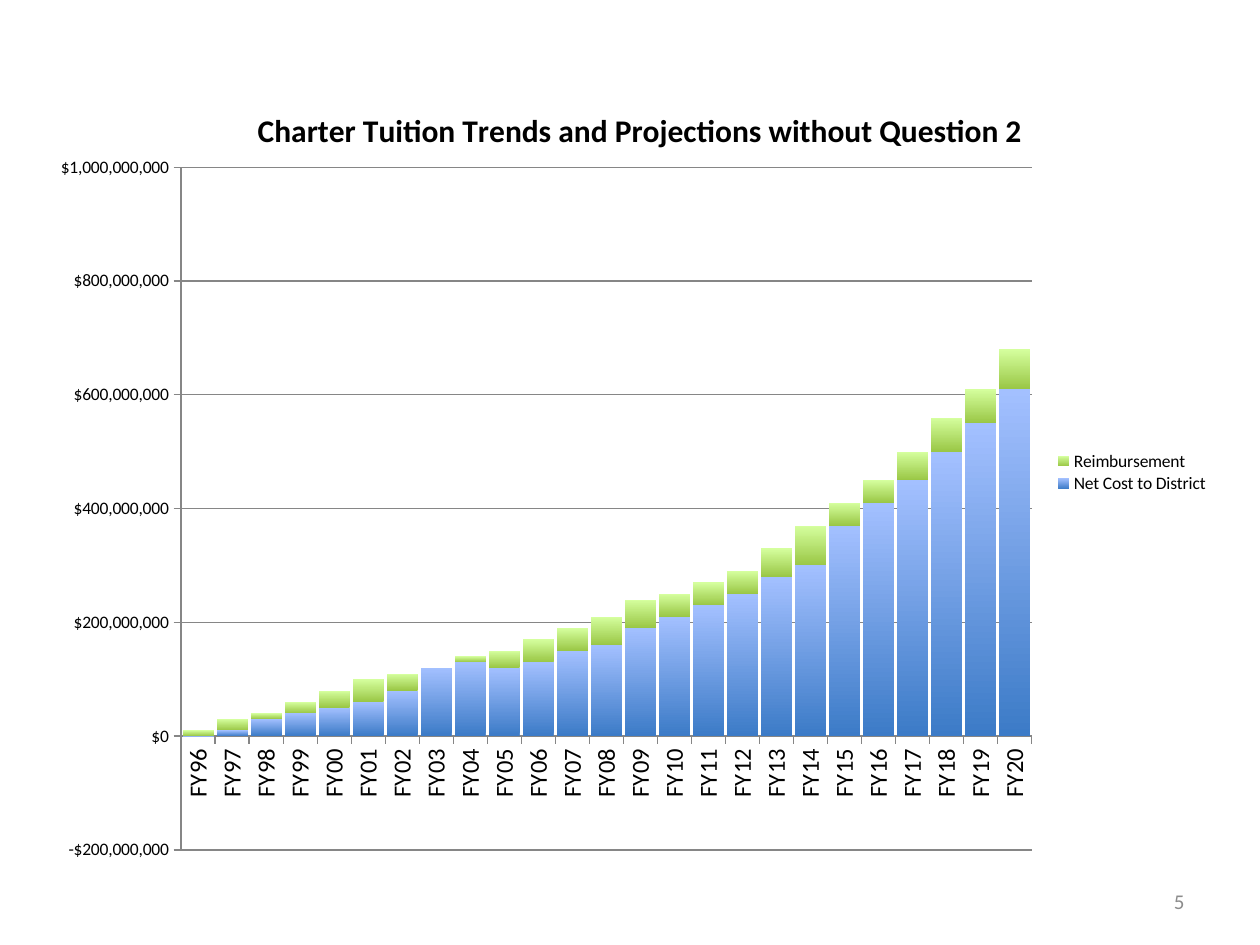
from lxml import etree
from pptx import Presentation
from pptx.chart.data import CategoryChartData
from pptx.dml.color import RGBColor
from pptx.enum.chart import XL_CHART_TYPE, XL_LEGEND_POSITION, XL_TICK_MARK
from pptx.enum.text import MSO_ANCHOR, PP_ALIGN
from pptx.oxml.ns import qn
from pptx.util import Pt

STACKED = XL_CHART_TYPE.COLUMN_STACKED
RIGHT_LEGEND = XL_LEGEND_POSITION.RIGHT
TICK_OUT = XL_TICK_MARK.OUTSIDE
MIDDLE = MSO_ANCHOR.MIDDLE
RIGHT = PP_ALIGN.RIGHT
MILLION = 1_000_000
GRAY = "868686"


def format_text(font, size, color="000000", bold=False):
    font.name, font.size, font.bold = "Calibri", Pt(size), bold
    font.color.rgb = RGBColor.from_string(color)


def place(parent, before, **settings):
    """Give a chart part a manual layout, in fractions of the chart."""
    for old in parent.findall(qn("c:layout")):
        parent.remove(old)
    layout = etree.Element(qn("c:layout"))
    manual = etree.SubElement(layout, qn("c:manualLayout"))
    for name, value in settings.items():
        etree.SubElement(manual, qn("c:" + name)).set("val", str(value))
    following = next(child for child in parent if child.tag in map(qn, before))
    following.addprevious(layout)


deck = Presentation()
deck.slide_width, deck.slide_height = Pt(720), Pt(540)
page = deck.slides.add_slide(deck.slide_layouts[6])

# Data, in millions of dollars
net_cost = [0, 10, 30, 40, 50, 60, 80, 120, 130, 120, 130, 150, 160, 190, 210,
            230, 250, 280, 300, 370, 410, 450, 500, 550, 610]
reimbursement = [10, 20, 10, 20, 30, 40, 30, 0, 10, 30, 40, 40, 50, 50, 40,
                 40, 40, 50, 70, 40, 40, 50, 60, 60, 70]
data = CategoryChartData(number_format='"$"#,##0')
data.categories = [f"FY{year % 100:02d}" for year in range(1996, 2021)]
for name, amounts in (("Net Cost to District", net_cost),
                      ("Reimbursement", reimbursement)):
    data.add_series(name, [amount * MILLION for amount in amounts])

# Stacked columns
chart = page.shapes.add_chart(
    STACKED, Pt(22.5), Pt(40.5), Pt(675), Pt(459), data).chart
format_text(chart.font, 10)
plot = chart.plots[0]
plot.gap_width, plot.overlap, plot.vary_by_categories = 10, 100, False
gradients = [("3C7BC7", "A3C0FF"), ("9AC746", "D5FF9E")]
for series, colors in zip(plot.series, gradients):
    fill = series.format.fill
    fill.gradient()
    fill.gradient_angle = 90
    for stop, color, position in zip(fill.gradient_stops, colors, (0, 1)):
        stop.color.rgb = RGBColor.from_string(color)
        stop.position = position
    series.invert_if_negative = False

# Axes and gridlines
years, dollars = chart.category_axis, chart.value_axis
dollars.minimum_scale, dollars.maximum_scale = -200 * MILLION, 1000 * MILLION
dollars.major_unit = 200 * MILLION
dollars.tick_labels.number_format = '"$"#,##0'
dollars.tick_labels.number_format_is_linked = False
dollars.has_major_gridlines = True
for axis, size in ((years, 14), (dollars, 10)):
    axis.major_tick_mark = TICK_OUT
    format_text(axis.tick_labels.font, size)
for line in (years.format.line, dollars.format.line,
             dollars.major_gridlines.format.line):
    line.color.rgb = RGBColor.from_string(GRAY)
    line.width = Pt(0.75)
body = years._element.find(qn("c:txPr")).find(qn("a:bodyPr"))
body.set("rot", "-5400000")
body.set("vert", "horz")

# Chart title and legend
chart.has_title = True
title = chart.chart_title
title.text_frame.text = "Charter Tuition Trends and Projections without Question 2"
format_text(title.text_frame.paragraphs[0].runs[0].font, 18, bold=True)
chart.has_legend = True
legend = chart.legend
legend.position, legend.include_in_layout = RIGHT_LEGEND, False
format_text(legend.font, 10)

# Positions inside the chart
place(title._element, ["c:overlay"], xMode="edge", yMode="edge", x=0.18, y=0.04)
place(legend._element, ["c:overlay"], xMode="edge", yMode="edge",
      x=0.86, y=0.47, w=0.13, h=0.06)
place(plot._element.getparent(), ["c:barChart"], layoutTarget="inner",
      xMode="edge", yMode="edge", x=0.12, y=0.12, w=0.72, h=0.85)

# Page number
box = page.shapes.add_textbox(Pt(516), Pt(500.5), Pt(168), Pt(28.75))
frame = box.text_frame
frame.word_wrap, frame.vertical_anchor = True, MIDDLE
para = frame.paragraphs[0]
para.alignment = RIGHT
span = para.add_run()
span.text = "5"
format_text(span.font, 12, color="8C8C8C")

deck.save("out.pptx")
